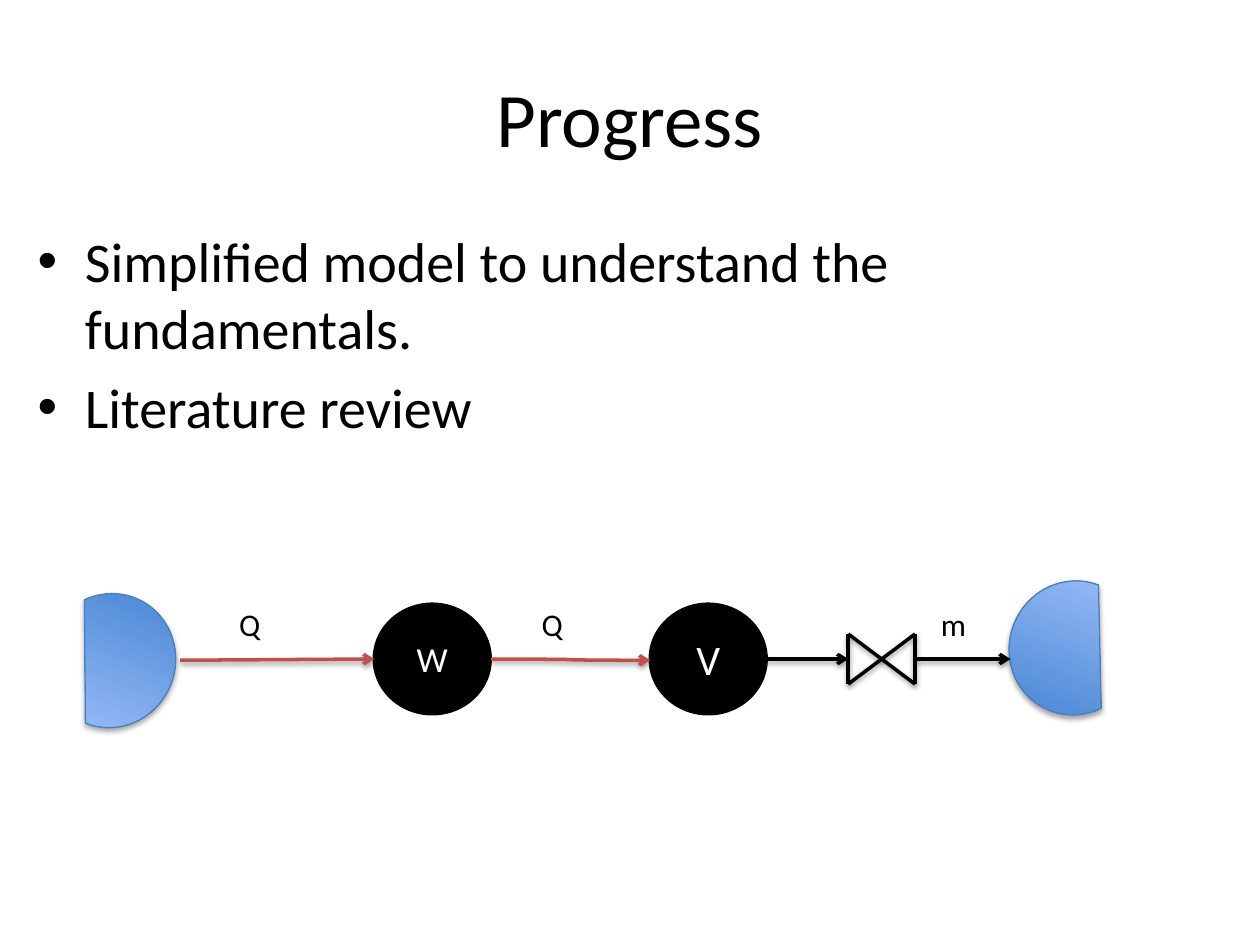
import pptx
import pptx.dml.color
import pptx.enum.dml
import pptx.enum.shapes
import pptx.enum.text
import pptx.oxml
import pptx.oxml.ns
import pptx.util
from lxml import etree

Pt = pptx.util.Pt
RGBColor = pptx.dml.color.RGBColor
SHAPE = pptx.enum.shapes.MSO_SHAPE
CONNECTOR = pptx.enum.shapes.MSO_CONNECTOR
ALIGN = pptx.enum.text.PP_ALIGN
ANCHOR = pptx.enum.text.MSO_ANCHOR
qn = pptx.oxml.ns.qn

BLACK = RGBColor(0x00, 0x00, 0x00)
WHITE = RGBColor(0xFF, 0xFF, 0xFF)
RED = RGBColor(0xC0, 0x50, 0x4D)
DARK_BLUE = RGBColor(0x3F, 0x80, 0xCE)
LIGHT_BLUE = RGBColor(0xA4, 0xC4, 0xFF)
EDGE_BLUE = RGBColor(0x4B, 0x7E, 0xBC)
FONT = "Calibri"

TITLE = "Progress"
BULLETS = ["Simplified model to understand the fundamentals.", "Literature review"]
NODES = [("W", 213.9, 20), ("V", 371.6, 24)]
RESERVOIRS = [(26, 339, 201.8), (576.8, 331.8, 21)]
FLOW_LABELS = [("Q", 129.6), ("Q", 302.4), ("m", 530.6)]

AXIS = 376.6
NODE_WIDTH, NODE_HEIGHT = 66.2, 62.6
VALVE_LEFT, VALVE_RIGHT = 484.7, 522.9
VALVE_TOP, VALVE_BOTTOM = 362.3, 390.9
STRAIGHT, CURVE = CONNECTOR.STRAIGHT, CONNECTOR.CURVE
ARROWS = [
    (STRAIGHT, 103, 377.3, 213.9, AXIS, RED),
    (CURVE, 280.6, AXIS, 371.6, 377.3, RED),
    (STRAIGHT, 437.8, AXIS, VALVE_LEFT, AXIS, BLACK),
    (STRAIGHT, VALVE_RIGHT, AXIS, 577.4, AXIS, BLACK),
]
VALVE_LINES = [
    (VALVE_LEFT, VALVE_TOP, VALVE_LEFT, VALVE_BOTTOM),
    (VALVE_LEFT, VALVE_TOP, VALVE_RIGHT, VALVE_BOTTOM),
    (VALVE_LEFT, VALVE_BOTTOM, VALVE_RIGHT, VALVE_TOP),
    (VALVE_RIGHT, VALVE_TOP, VALVE_RIGHT, VALVE_BOTTOM),
]


def add_span(para, text, size, color):
    span = para.add_run()
    span.text = text
    span.font.name = FONT
    span.font.size = Pt(size)
    span.font.color.rgb = color


def add_shadow(effects, distance, opacity):
    shadow = etree.SubElement(
        effects, qn("a:outerShdw"), blurRad=str(Pt(3.1)), dist=str(Pt(distance)),
        dir="5400000", rotWithShape="0")
    color = etree.SubElement(shadow, qn("a:srgbClr"), val=str(BLACK))
    etree.SubElement(color, qn("a:alpha"), val=str(opacity * 1000))


def add_line(shapes, kind, left, top, right, bottom, color, arrow=False):
    line = shapes.add_connector(kind, Pt(left), Pt(top), Pt(right), Pt(bottom))
    line.line.color.rgb = color
    line.line.width = Pt(2)
    properties = line._element.spPr
    if arrow:
        etree.SubElement(properties.find(qn("a:ln")), qn("a:tailEnd"), type="arrow")
    add_shadow(etree.SubElement(properties, qn("a:effectLst")), 1.6, 38)


def add_text_box(page, left, top, width, height):
    box = page.shapes.add_textbox(Pt(left), Pt(top), Pt(width), Pt(height))
    box.text_frame.word_wrap = True
    return box.text_frame


def add_heading(page):
    title = page.shapes.title
    title.left, title.top, title.width, title.height = Pt(36), Pt(21.6), Pt(648), Pt(90)
    title.text_frame.vertical_anchor = ANCHOR.MIDDLE
    para = title.text_frame.paragraphs[0]
    para.alignment = ALIGN.CENTER
    add_span(para, TITLE, 44, BLACK)


def add_bullets(page):
    frame = add_text_box(page, 14.4, 126, 648, 356.4)
    for index, text in enumerate(BULLETS):
        para = frame.add_paragraph() if index else frame.paragraphs[0]
        properties = para._p.get_or_add_pPr()
        properties.set("marL", str(Pt(27)))
        properties.set("indent", str(Pt(-27)))
        etree.SubElement(properties, qn("a:buFont"), typeface="Arial")
        etree.SubElement(properties, qn("a:buChar"), char="•")
        if index:
            para.space_before = Pt(6.4)
        add_span(para, text, 32, BLACK)


def add_node(page, text, left, size):
    node = page.shapes.add_shape(
        SHAPE.OVAL, Pt(left), Pt(AXIS - NODE_HEIGHT / 2), Pt(NODE_WIDTH), Pt(NODE_HEIGHT))
    node.shadow.inherit = False
    node.fill.solid()
    node.fill.fore_color.rgb = BLACK
    node.line.color.rgb = BLACK
    node.line.width = Pt(2)
    node.text_frame.vertical_anchor = ANCHOR.MIDDLE
    para = node.text_frame.paragraphs[0]
    para.alignment = ALIGN.CENTER
    add_span(para, text, size, WHITE)


def add_reservoir(page, left, top, rotation):
    chord = page.shapes.add_shape(SHAPE.CHORD, Pt(left), Pt(top), Pt(74.2), Pt(77))
    chord.rotation = rotation
    chord.fill.gradient()
    chord.fill.gradient_angle = 90
    for stop, color in zip(chord.fill.gradient_stops, (DARK_BLUE, LIGHT_BLUE)):
        stop.color.rgb = color
    chord.line.color.rgb = EDGE_BLUE
    chord.line.width = Pt(0.75)
    chord.shadow.inherit = False
    add_shadow(chord._element.spPr.find(qn("a:effectLst")), 1.8, 35)


def main():
    deck = pptx.Presentation()
    deck.slide_width, deck.slide_height = Pt(720), Pt(540)
    page = deck.slides.add_slide(deck.slide_layouts[5])
    add_heading(page)
    add_bullets(page)
    for node in NODES:
        add_node(page, *node)
    for reservoir in RESERVOIRS:
        add_reservoir(page, *reservoir)
    valve = page.shapes.add_group_shape()
    for ends in VALVE_LINES:
        add_line(valve.shapes, STRAIGHT, *ends, BLACK)
    for arrow in ARROWS:
        add_line(page.shapes, *arrow, arrow=True)
    for text, left in FLOW_LABELS:
        frame = add_text_box(page, left, 342, 41.8, 29)
        frame.auto_size = pptx.enum.text.MSO_AUTO_SIZE.SHAPE_TO_FIT_TEXT
        add_span(frame.paragraphs[0], text, 18, BLACK)
    deck.save("out.pptx")


if __name__ == "__main__":
    main()
